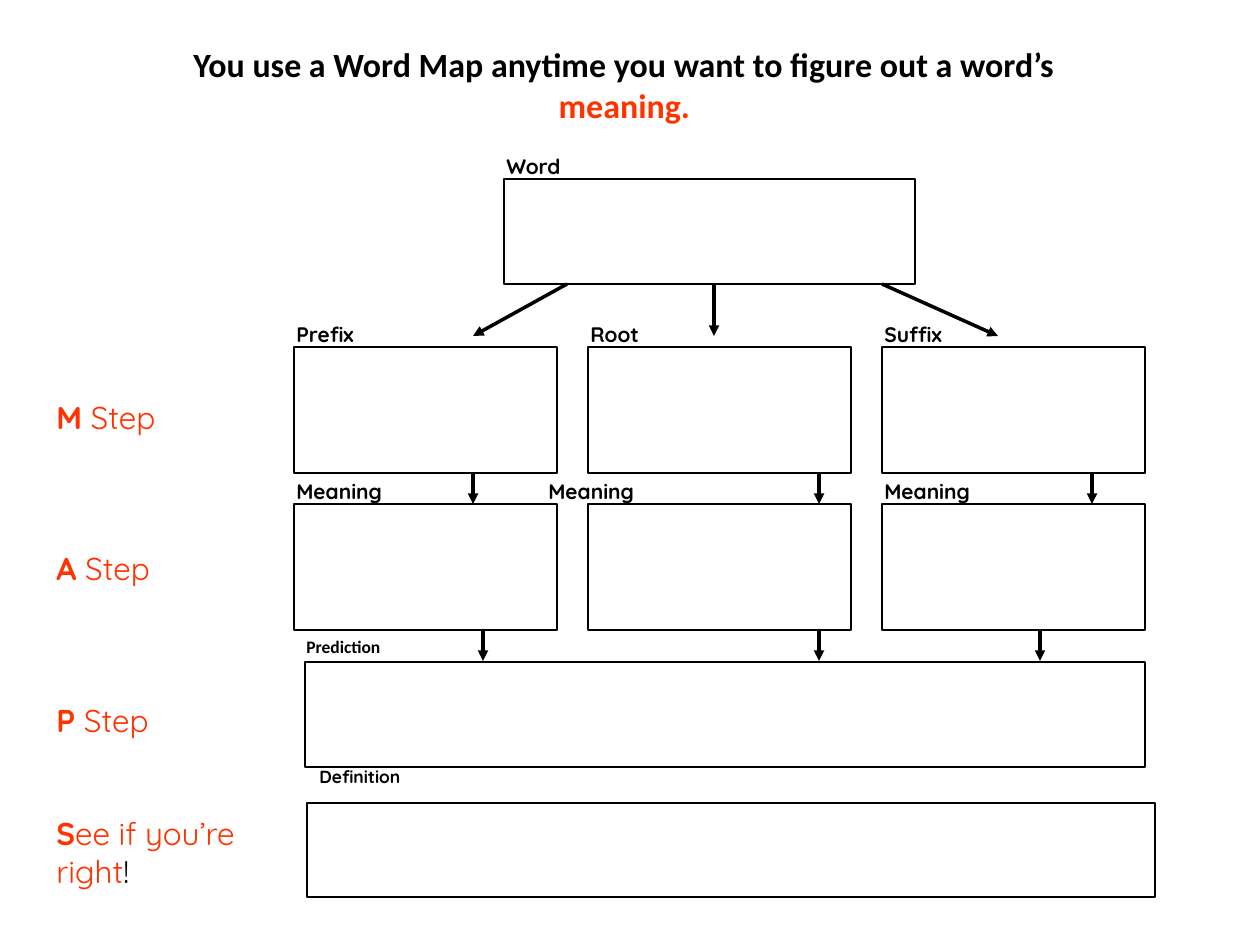
from lxml.etree import SubElement
from pptx import Presentation
from pptx.dml.color import RGBColor
from pptx.enum.shapes import MSO_CONNECTOR, MSO_SHAPE
from pptx.enum.text import MSO_ANCHOR, PP_ALIGN
from pptx.oxml.ns import qn
from pptx.util import Emu, Pt

EMU_PER_PX = 914400 / 126
COLORS = {"ink": "000000", "accent": "FF3300"}
COLUMN_LEFTS = [294 + 294 * column for column in range(3)]
LABEL_OFFSET = -10


def px(length):
    return Emu(round(length * EMU_PER_PX))


def color(name):
    return RGBColor.from_string(COLORS[name])


def add_box(slide, left, top, width, height):
    box = slide.shapes.add_shape(
        MSO_SHAPE.RECTANGLE, px(left), px(top), px(width), px(height))
    box.shadow.inherit = False
    box.fill.background()
    box.line.color.rgb = color("ink")
    box.line.width = Pt(0.75)


def add_text_frame(slide, left, top, width, height):
    text_box = slide.shapes.add_textbox(px(left), px(top), px(width), px(height))
    text_box.text_frame.word_wrap = True
    return text_box.text_frame


def add_run(paragraph, text, size, font_name, color_name="ink", bold=True):
    run = paragraph.add_run()
    run.text = text
    run.font.size = Pt(size)
    run.font.name = font_name
    run.font.bold = bold
    run.font.color.rgb = color(color_name)


def add_label(slide, text, left, top, size=12, font_name="Quicksand"):
    frame = add_text_frame(slide, left, top, 126, 42)
    add_run(frame.paragraphs[0], text, size, font_name)


def add_arrow(slide, start_x, start_y, end_x, end_y):
    arrow = slide.shapes.add_connector(
        MSO_CONNECTOR.STRAIGHT, px(start_x), px(start_y), px(end_x), px(end_y))
    arrow.line.color.rgb = color("ink")
    arrow.line.width = Pt(2)
    SubElement(arrow.line._get_or_add_ln(), qn("a:tailEnd"), type="triangle")
    SubElement(arrow._element.spPr, qn("a:effectLst"))


def add_title(slide):
    frame = add_text_frame(slide, 94, 32, 1061, 105)
    frame.vertical_anchor = MSO_ANCHOR.MIDDLE
    paragraph = frame.paragraphs[0]
    paragraph.alignment = PP_ALIGN.CENTER
    add_run(paragraph, "You use a Word Map anytime you want to figure out a word’s",
            19.4, "Calibri")
    paragraph.add_line_break()
    add_run(paragraph, "meaning.", 19.4, "Calibri", "accent")


def add_steps(slide):
    frame = add_text_frame(slide, 44, 392, 263, 471)
    line_height = 21.6
    steps = [("M", " Step", 0), ("A", " Step", 3), ("P", " Step", 3),
             ("S", "ee if you’re right", 2)]
    for index, (initial, rest, lines_before) in enumerate(steps):
        paragraph = frame.add_paragraph() if index else frame.paragraphs[0]
        paragraph.line_spacing = Pt(line_height)
        paragraph.space_before = Pt(lines_before * line_height)
        add_run(paragraph, initial, 18, "Quicksand", "accent")
        add_run(paragraph, rest, 18, "Quicksand", "accent", bold=False)
    add_run(paragraph, "!", 18, "Quicksand", bold=False)


def add_word_parts(slide):
    """Add the row of word parts and the row of their meanings."""
    for left, part in zip(COLUMN_LEFTS, ("Prefix", "Root", "Suffix")):
        add_box(slide, left, 347, 263, 126)
        add_label(slide, part, left + LABEL_OFFSET, 315)
        add_box(slide, left, 504, 263, 126)
    for left in (284, 536, 872):
        add_label(slide, "Meaning", left, 472)


def add_arrows(slide):
    for start_x, end_x in ((567, 473), (714, 714), (882, 998)):
        add_arrow(slide, start_x, 284, end_x, 336)
    for top, centers in ((473, (473, 819, 1092)), (630, (483, 819, 1040))):
        for center in centers:
            add_arrow(slide, center, top, center, top + 31)


def main():
    presentation = Presentation()
    presentation.slide_width = px(1260)
    presentation.slide_height = px(945)
    slide = presentation.slides.add_slide(presentation.slide_layouts[6])

    add_title(slide)
    add_box(slide, 504, 179, 411, 105)
    add_label(slide, "Word", 504 + LABEL_OFFSET, 147)
    add_word_parts(slide)
    add_box(slide, 305, 662, 840, 105)
    add_label(slide, "Prediction", 294, 630, 10, "Calibri")
    add_box(slide, 307, 803, 848, 94)
    add_label(slide, "Definition", 307, 760, 10)
    add_steps(slide)
    add_arrows(slide)
    presentation.save("out.pptx")


if __name__ == "__main__":
    main()
